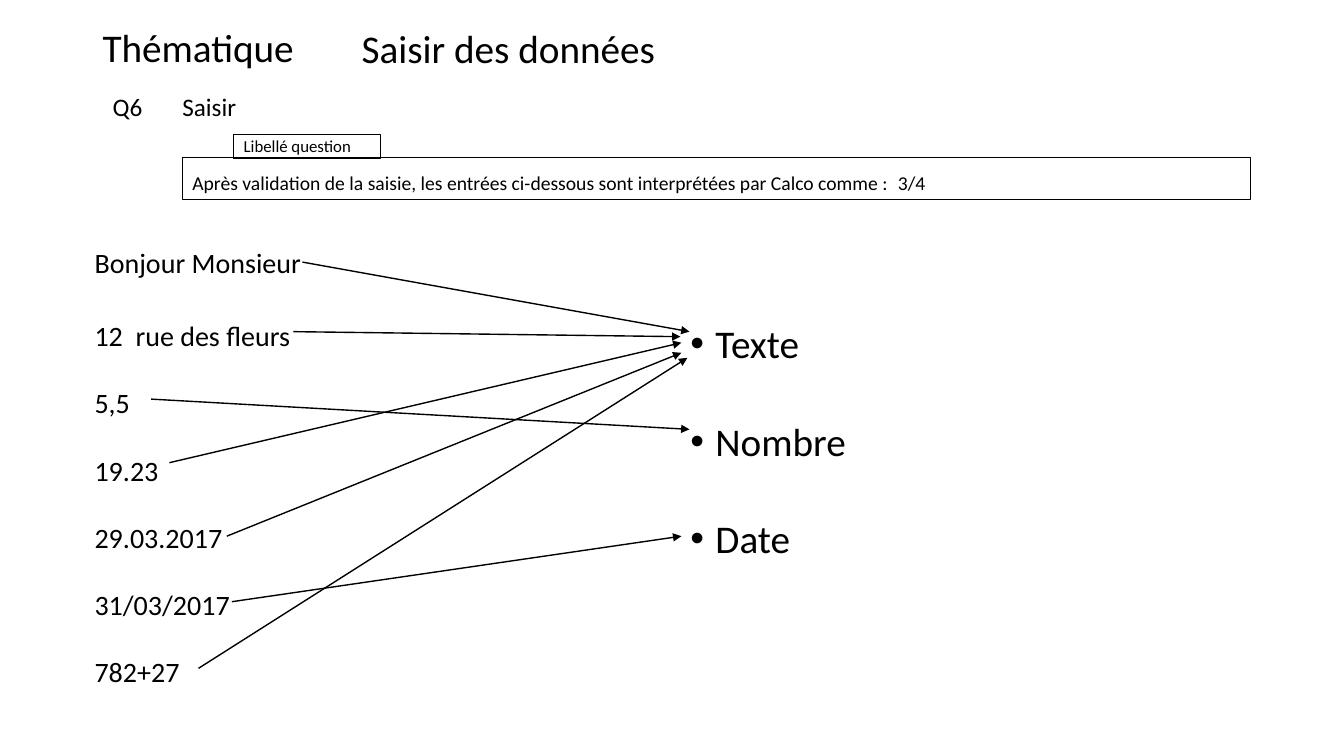
from pptx import Presentation
from pptx.dml.color import RGBColor
from pptx.enum.shapes import MSO_CONNECTOR, MSO_SHAPE
from pptx.enum.text import MSO_ANCHOR
from pptx.oxml.ns import qn
from pptx.util import Pt
from lxml import etree

BLACK = RGBColor(0, 0, 0)
WHITE = RGBColor(255, 255, 255)
RECT = MSO_SHAPE.RECTANGLE
LINE = MSO_CONNECTOR.STRAIGHT
TOP, MID, LOW = MSO_ANCHOR.TOP, MSO_ANCHOR.MIDDLE, MSO_ANCHOR.BOTTOM


def write(frame, text, size=18, anchor=MID, lead=0.9, gaps=(), bullet=False, inset=3.6):
    frame.word_wrap = True
    frame.vertical_anchor = anchor
    frame.margin_left = frame.margin_right = Pt(7.2)
    frame.margin_top, frame.margin_bottom = Pt(inset), Pt(3.6)
    for row, words in enumerate(text.split("\n")):
        para = frame.paragraphs[0] if row == 0 else frame.add_paragraph()
        para.line_spacing = lead
        para.alignment = 1
        para.space_before = Pt(gaps[min(row, len(gaps)) - 1] if row else 0)
        run = para.add_run()
        run.text = words
        run.font.name = "Calibri"
        run.font.size = Pt(size)
        run.font.color.rgb = BLACK
        if bullet:
            props = para._p.get_or_add_pPr()
            props.set("marL", str(Pt(18)))
            props.set("indent", str(-Pt(18)))
            etree.SubElement(props, qn("a:buFont")).set("typeface", "Arial")
            etree.SubElement(props, qn("a:buChar")).set("char", "•")


class Board:
    def __init__(self, slide):
        self.shapes = slide.shapes
        self.thin = Pt(0.75)
        self.thick = Pt(1)

    def text(self, box, words, **style):
        shape = self.shapes.add_textbox(*map(Pt, box))
        write(shape.text_frame, words, **style)

    def frame(self, box, words, fill=None, **style):
        shape = self.shapes.add_shape(RECT, *map(Pt, box))
        shape.shadow.inherit = False
        if fill is None:
            shape.fill.background()
        else:
            shape.fill.solid()
            shape.fill.fore_color.rgb = fill
        shape.line.color.rgb = BLACK
        shape.line.width = self.thin
        write(shape.text_frame, words, **style)

    def arrow(self, start, end):
        link = self.shapes.add_connector(LINE, *map(Pt, start + end))
        link.line.color.rgb = BLACK
        link.line.width = self.thick
        etree.SubElement(link.line._get_or_add_ln(), qn("a:tailEnd")).set("type", "triangle")
        etree.SubElement(link._element.spPr, qn("a:effectLst"))


ENTRIES = """Bonjour Monsieur
12  rue des fleurs
5,5
19.23
29.03.2017
31/03/2017
782+27"""

ARROWS = [
    ((216, 187.2), (492.5, 236.9)),
    ((209.5, 236.9), (486, 240.5)),
    ((108, 285.1), (492.5, 306.7)),
    ((121, 330.5), (486.7, 244.8)),
    ((162, 383), (486.7, 252)),
    ((165.6, 429.8), (486.7, 383)),
    ((141.8, 477.4), (491, 255.6)),
]


def main():
    deck = Presentation()
    deck.slide_width, deck.slide_height = Pt(960), Pt(540)
    board = Board(deck.slides.add_slide(deck.slide_layouts[6]))
    board.text((66.2, 13, 163.4, 41), "Thématique", size=28, lead=1)
    board.frame((167, 95.8, 105.1, 17.3), "Libellé question", fill=WHITE,
                size=12, anchor=TOP, lead=1, inset=1.4)
    board.text((60.5, 171.6, 408.2, 342.7), ENTRIES, size=20, anchor=TOP,
               lead=1, gaps=(28.5, 24))
    board.text((486, 224.8, 408.2, 261.9), "Texte\nNombre\nDate", size=28,
               anchor=TOP, lead=1, gaps=(36,), bullet=True)
    board.frame((130.3, 112.3, 763.2, 30.2),
                "Après validation de la saisie, les entrées ci-dessous sont "
                "interprétées par Calco comme : \t3/4", size=14, anchor=LOW)
    board.text((251.3, 10.1, 643, 52.6), "Saisir des données", size=28)
    board.text((73.4, 62.6, 49, 30.2), "Q6")
    board.text((123.1, 62.6, 771.1, 30.2), "Saisir")
    for start, end in ARROWS:
        board.arrow(start, end)
    deck.save("out.pptx")


if __name__ == "__main__":
    main()
